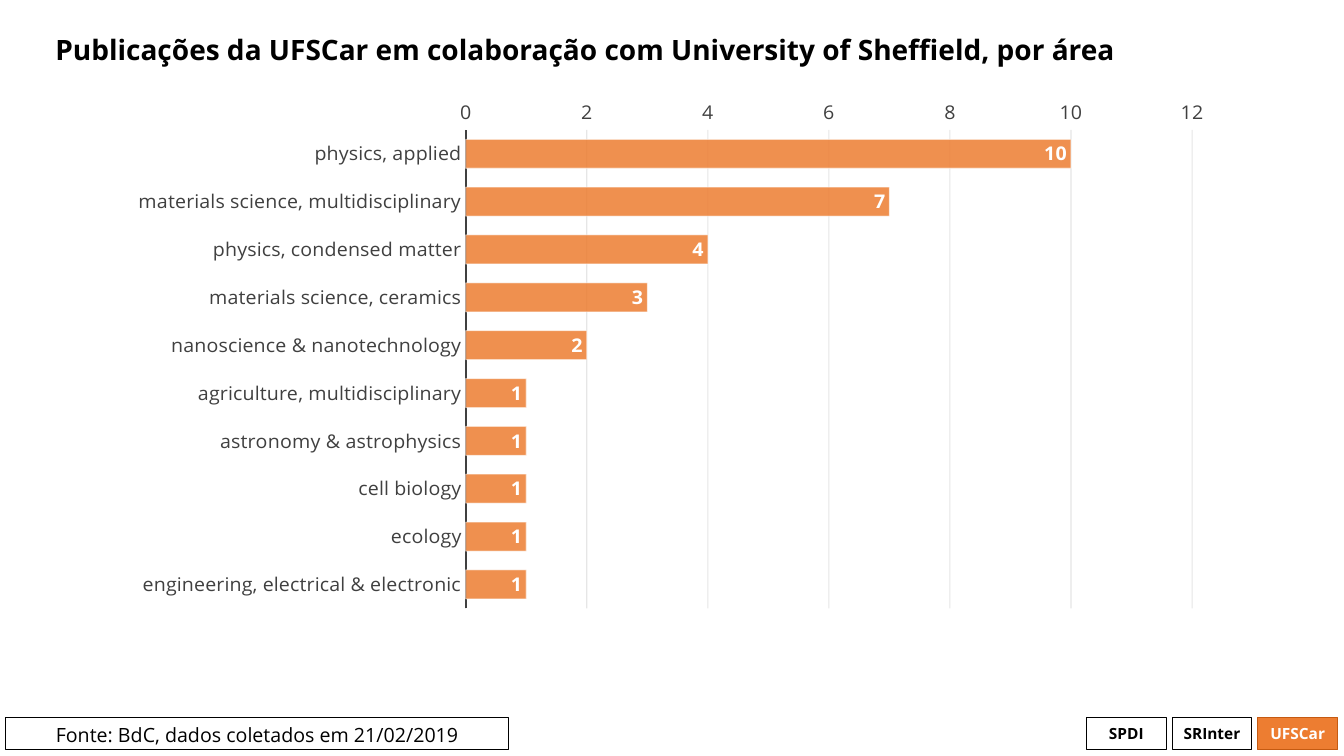
from dataclasses import dataclass

import pptx
import pptx.chart.data
import pptx.dml.color
import pptx.enum.chart
import pptx.enum.shapes
import pptx.enum.text
import pptx.oxml
import pptx.oxml.ns
import pptx.util
from pptx.util import Cm


@dataclass(frozen=True)
class Theme:
    font: str = "Open Sans"
    black: str = "000000"
    white: str = "FFFFFF"
    orange: str = "ED7D31"
    dark_orange: str = "C55A11"
    axis: str = "404040"
    grid: str = "0D0D0D"
    title_size: int = 20
    body_size: int = 14
    badge_size: int = 11
    thin: float = 0.75
    thick: float = 1.5


THEME = Theme()

AREAS = {
    "physics, applied": 10,
    "materials science, multidisciplinary": 7,
    "physics, condensed matter": 4,
    "materials science, ceramics": 3,
    "nanoscience & nanotechnology": 2,
    "agriculture, multidisciplinary": 1,
    "astronomy & astrophysics": 1,
    "cell biology": 1,
    "ecology": 1,
    "engineering, electrical & electronic": 1,
}

BADGES = [
    ("SPDI", None, THEME.black, THEME.black),
    ("SRInter", None, THEME.black, THEME.black),
    ("UFSCar", THEME.orange, THEME.dark_orange, THEME.white),
]
FOOTER_TOP, FOOTER_HEIGHT = 18.08, 0.82
BADGE_LEFT, BADGE_WIDTH, BADGE_STEP = 27.38, 2.01, 2.16
PLOT_LAYOUT = {"x": 0.315, "y": 0.022, "w": 0.654, "h": 0.891}


def rgb(value):
    return pptx.dml.color.RGBColor.from_string(value)


def style_font(font, size, color, bold=False):
    font.name = THEME.font
    font.size = pptx.util.Pt(size)
    font.color.rgb = rgb(color)
    font.bold = bold


def style_line(line, color, width):
    line.color.rgb = rgb(color)
    line.width = pptx.util.Pt(width)


def set_title(slide, text):
    title = slide.shapes.title
    title.left, title.top = Cm(1.14), Cm(0.15)
    title.width, title.height = Cm(31.52), Cm(2.31)
    title.text_frame.text = text
    title.text_frame.vertical_anchor = pptx.enum.text.MSO_ANCHOR.MIDDLE
    paragraph = title.text_frame.paragraphs[0]
    paragraph.alignment = pptx.enum.text.PP_ALIGN.LEFT
    paragraph.line_spacing = 0.9
    style_font(paragraph.font, THEME.title_size, THEME.black, True)


def add_footer_box(slide, left, width, text, size, fill=None,
                   border=THEME.black, color=THEME.black, bold=False):
    box = slide.shapes.add_shape(
        pptx.enum.shapes.MSO_SHAPE.RECTANGLE,
        Cm(left), Cm(FOOTER_TOP), Cm(width), Cm(FOOTER_HEIGHT))
    box.shadow.inherit = False
    if fill:
        box.fill.solid()
        box.fill.fore_color.rgb = rgb(fill)
    else:
        box.fill.background()
    style_line(box.line, border, THEME.thin)
    frame = box.text_frame
    frame.text = text
    frame.margin_left = frame.margin_right = Cm(0)
    paragraph = frame.paragraphs[0]
    paragraph.alignment = pptx.enum.text.PP_ALIGN.CENTER
    style_font(paragraph.font, size, color, bold)
    return box


def set_opacity(chart, query, percent):
    for color in chart.element.xpath(query):
        alpha = pptx.oxml.parse_xml(
            f'<a:alpha {pptx.oxml.ns.nsdecls("a")} val="{percent * 1000}"/>')
        color.append(alpha)


def set_plot_layout(chart):
    plot_area = chart.element.xpath(".//c:plotArea")[0]
    for layout in plot_area.xpath("./c:layout"):
        plot_area.remove(layout)
    modes = "".join(f'<c:{axis}Mode val="edge"/>' for axis in "xy")
    extents = "".join(
        f'<c:{key} val="{value}"/>' for key, value in PLOT_LAYOUT.items())
    plot_area.insert(0, pptx.oxml.parse_xml(
        f'<c:layout {pptx.oxml.ns.nsdecls("c")}><c:manualLayout>'
        f'<c:layoutTarget val="inner"/>{modes}{extents}'
        '</c:manualLayout></c:layout>'))


def style_axes(chart):
    areas, counts = chart.category_axis, chart.value_axis
    for axis in (areas, counts):
        axis.major_tick_mark = pptx.enum.chart.XL_TICK_MARK.NONE
        axis.minor_tick_mark = pptx.enum.chart.XL_TICK_MARK.NONE
        style_font(axis.tick_labels.font, THEME.body_size, THEME.axis)
    areas.reverse_order = True
    areas.crosses = pptx.enum.chart.XL_AXIS_CROSSES.MAXIMUM
    areas.has_major_gridlines = False
    style_line(areas.format.line, THEME.axis, THEME.thick)
    counts.minimum_scale, counts.maximum_scale = 0, 12
    counts.major_unit = 2
    counts.format.line.fill.background()
    counts.has_major_gridlines = True
    style_line(counts.major_gridlines.format.line, THEME.grid, THEME.thin)
    set_opacity(chart, ".//c:majorGridlines//a:srgbClr", 10)


def style_bars(chart):
    plot = chart.plots[0]
    plot.gap_width = 65
    plot.vary_by_categories = False
    publications = plot.series[0]
    publications.format.fill.solid()
    publications.format.fill.fore_color.rgb = rgb(THEME.orange)
    style_line(publications.format.line, THEME.white, THEME.thin)
    set_opacity(chart, ".//c:ser/c:spPr/a:solidFill/a:srgbClr", 85)
    set_opacity(chart, ".//c:ser/c:spPr/a:ln/a:solidFill/a:srgbClr", 50)
    labels = publications.data_labels
    labels.show_value = True
    labels.position = pptx.enum.chart.XL_LABEL_POSITION.INSIDE_END
    style_font(labels.font, THEME.body_size, THEME.white, True)


def add_area_chart(slide):
    data = pptx.chart.data.CategoryChartData()
    data.categories = list(AREAS)
    data.add_series("Series 1", list(AREAS.values()))
    chart = slide.shapes.add_chart(
        pptx.enum.chart.XL_CHART_TYPE.BAR_CLUSTERED,
        Cm(2.92), Cm(2.51), Cm(27.99), Cm(14), data).chart
    chart.has_legend = False
    chart.has_title = False
    style_font(chart.font, THEME.body_size, THEME.black)
    style_axes(chart)
    style_bars(chart)
    set_plot_layout(chart)


def main():
    presentation = pptx.Presentation()
    presentation.slide_width, presentation.slide_height = Cm(33.87), Cm(19.05)
    slide = presentation.slides.add_slide(presentation.slide_layouts[5])
    set_title(slide, "Publicações da UFSCar em colaboração com "
                     "University of Sheffield, por área")
    for index, (name, fill, border, color) in enumerate(BADGES):
        add_footer_box(slide, BADGE_LEFT + index * BADGE_STEP, BADGE_WIDTH,
                       name, THEME.badge_size, fill, border, color, True)
    source = add_footer_box(slide, 0.15, 12.67,
                            "Fonte: BdC, dados coletados em 21/02/2019",
                            THEME.body_size)
    source.text_frame.vertical_anchor = pptx.enum.text.MSO_ANCHOR.TOP
    add_area_chart(slide)
    presentation.save("out.pptx")


if __name__ == "__main__":
    main()
